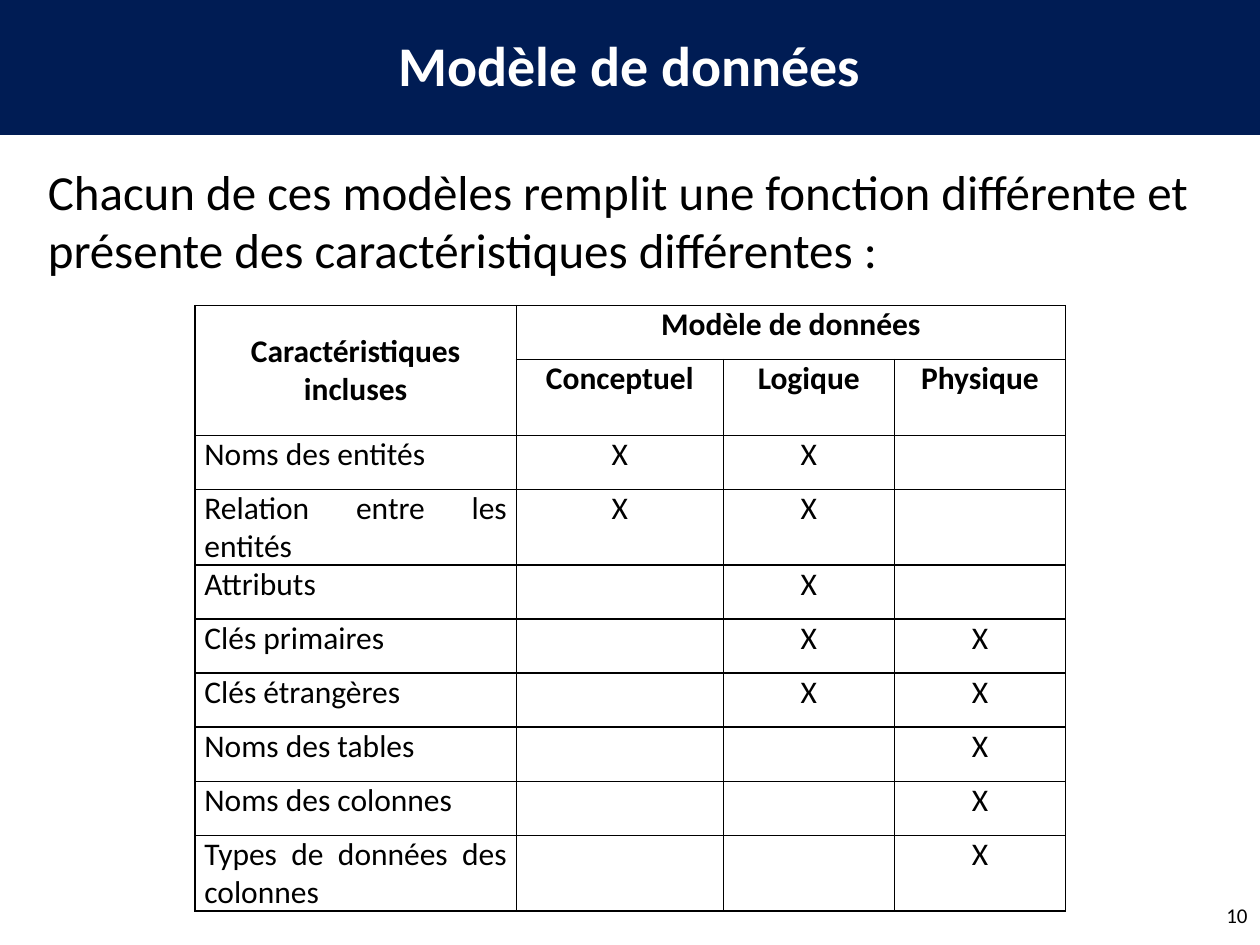
from dataclasses import dataclass

from lxml.etree import SubElement
from pptx import Presentation
from pptx.dml.color import RGBColor
from pptx.enum.shapes import MSO_SHAPE as Shape
from pptx.enum.text import MSO_ANCHOR as Anchor, MSO_AUTO_SIZE as AutoSize, PP_ALIGN as Align
from pptx.oxml.ns import qn
from pptx.util import Cm, Pt


@dataclass(frozen=True)
class Theme:
    font: str = "Calibri"
    navy: str = "001C54"
    white: str = "FFFFFF"
    black: str = "000000"
    title_size: int = 32
    body_size: int = 28
    table_size: int = 18
    number_size: int = 12
    border: float = 1


THEME = Theme()

COLUMN_WIDTHS = (6.48, 4.17, 3.45, 3.45)
ROW_HEIGHT = 1.09
MODELS = ("Conceptuel", "Logique", "Physique")
# Each characteristic with the initials of the models that include it.
CHARACTERISTICS = (
    ("Noms des entités", "CL"),
    ("Relation entre les entités", "CL"),
    ("Attributs", "L"),
    ("Clés primaires", "LP"),
    ("Clés étrangères", "LP"),
    ("Noms des tables", "P"),
    ("Noms des colonnes", "P"),
    ("Types de données des colonnes", "P"),
)


def write(frame, text, *, size, color=THEME.black, bold=False,
          align=Align.LEFT, spacing=None):
    paragraph = frame.paragraphs[0]
    paragraph.alignment = align
    paragraph.space_before = Pt(0)
    if spacing:
        paragraph.line_spacing = spacing
    run = paragraph.add_run()
    run.text = text
    run.font.name = THEME.font
    run.font.size = Pt(size)
    run.font.bold = bold
    run.font.color.rgb = RGBColor.from_string(color)


def place(shape, left, top, width, height):
    shape.left, shape.top = Cm(left), Cm(top)
    shape.width, shape.height = Cm(width), Cm(height)


def add_banner(slide, width):
    """Draw the title band behind everything else."""
    banner = slide.shapes.add_shape(Shape.RECTANGLE, 0, 0, width, Cm(2.72))
    banner.shadow.inherit = False
    banner.fill.solid()
    banner.fill.fore_color.rgb = RGBColor.from_string(THEME.navy)
    banner.line.fill.background()
    slide.shapes._spTree.insert(2, banner._element)


def fill_title(title, text):
    place(title, 1.75, 0.41, 21.89, 1.93)
    title.text_frame.vertical_anchor = Anchor.MIDDLE
    write(title.text_frame, text, size=THEME.title_size, color=THEME.white,
          bold=True, align=Align.CENTER, spacing=0.9)


def fill_body(body, text):
    place(body, 0.71, 3.12, 24, 2.64)
    frame = body.text_frame
    frame.auto_size = AutoSize.SHAPE_TO_FIT_TEXT
    write(frame, text, size=THEME.body_size)
    properties = frame.paragraphs[0]._p.get_or_add_pPr()
    properties.set("marL", "0")
    properties.set("indent", "0")
    SubElement(properties, qn("a:buNone"))


def add_page_number(slide, text):
    box = slide.shapes.add_textbox(Cm(19.69), Cm(17.93), Cm(5.71), Cm(1.02))
    frame = box.text_frame
    frame.word_wrap = True
    frame.vertical_anchor = Anchor.MIDDLE
    write(frame, text, size=THEME.number_size, align=Align.RIGHT)


def set_borders(cell):
    properties = cell._tc.get_or_add_tcPr()
    for position, side in enumerate(("lnL", "lnR", "lnT", "lnB")):
        line = SubElement(properties, qn(f"a:{side}"), w=str(Pt(THEME.border)))
        properties.insert(position, line)
        fill = SubElement(line, qn("a:solidFill"))
        SubElement(fill, qn("a:srgbClr"), val=THEME.black)


def format_cell(cell):
    cell.margin_left = cell.margin_right = Cm(0.19)
    cell.margin_top = cell.margin_bottom = 0
    cell.fill.background()
    set_borders(cell)


def write_cell(cell, text, align=Align.CENTER, bold=False):
    write(cell.text_frame, text, size=THEME.table_size, align=align, bold=bold)


def add_model_table(slide):
    row_count = len(CHARACTERISTICS) + 2
    table = slide.shapes.add_table(
        row_count, len(COLUMN_WIDTHS), Cm(3.93), Cm(6.16),
        Cm(sum(COLUMN_WIDTHS)), Cm(ROW_HEIGHT * row_count)).table
    table.first_row = table.horz_banding = False
    for column, width in zip(table.columns, COLUMN_WIDTHS):
        column.width = Cm(width)
    for cell in table.iter_cells():
        format_cell(cell)

    corner, group = table.cell(0, 0), table.cell(0, 1)
    corner.merge(table.cell(1, 0))
    corner.vertical_anchor = Anchor.MIDDLE
    group.merge(table.cell(0, len(MODELS)))
    write_cell(corner, "Caractéristiques incluses", bold=True)
    write_cell(group, "Modèle de données", bold=True)
    for column, model in enumerate(MODELS, start=1):
        write_cell(table.cell(1, column), model, bold=True)

    for row, (characteristic, included) in enumerate(CHARACTERISTICS, start=2):
        write_cell(table.cell(row, 0), characteristic, align=Align.JUSTIFY)
        for column, model in enumerate(MODELS, start=1):
            if model[0] in included:
                write_cell(table.cell(row, column), "X")


def main():
    deck = Presentation()
    deck.slide_width, deck.slide_height = Cm(25.4), Cm(19.05)
    slide = deck.slides.add_slide(deck.slide_layouts[1])
    add_banner(slide, deck.slide_width)
    fill_title(slide.shapes.title, "Modèle de données")
    fill_body(slide.placeholders[1],
              "Chacun de ces modèles remplit une fonction différente et "
              "présente des caractéristiques différentes :")
    add_page_number(slide, "10")
    add_model_table(slide)
    deck.save("out.pptx")


if __name__ == "__main__":
    main()
